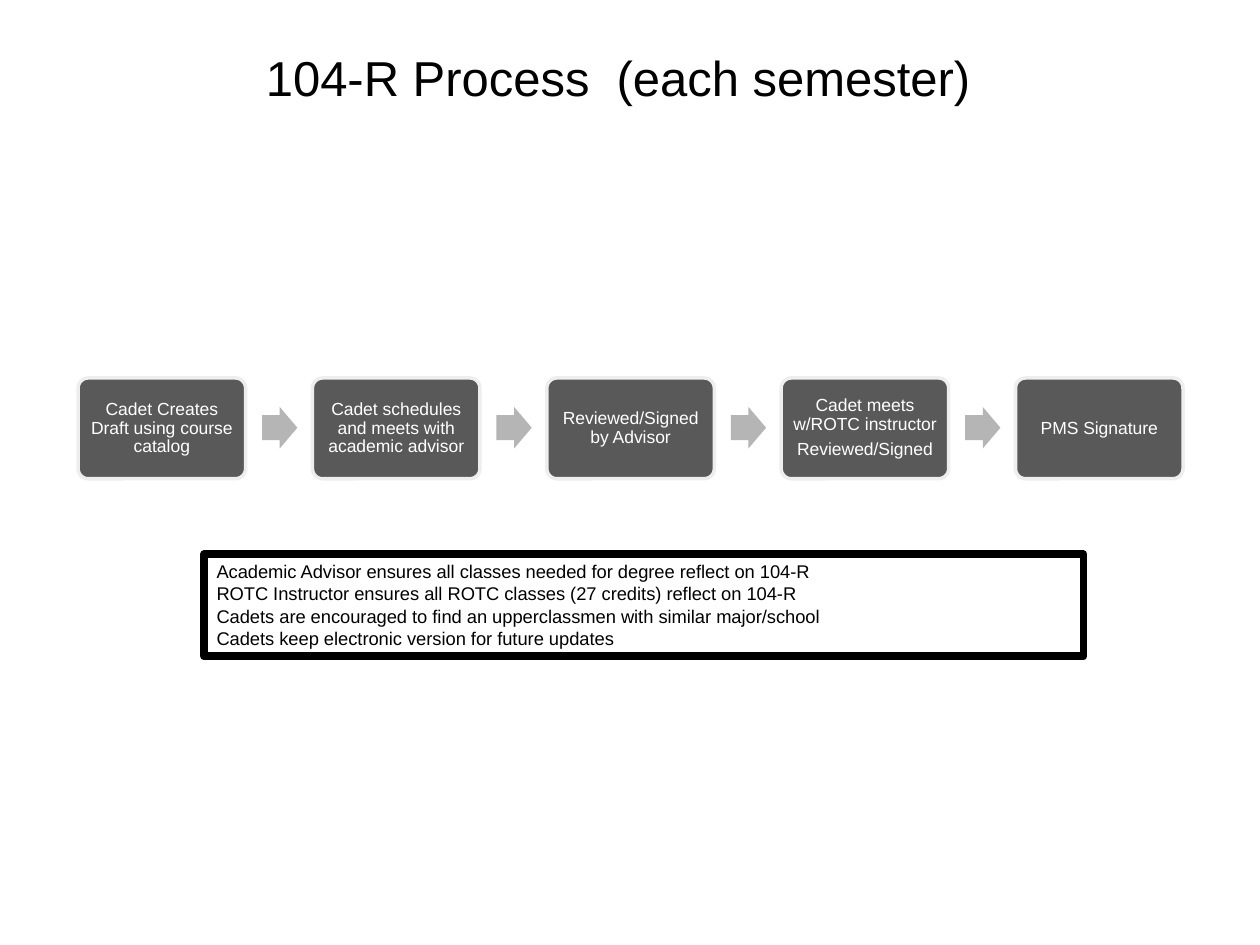
import pptx
import pptx.dml.color
import pptx.enum.shapes
import pptx.enum.text
import pptx.util

Inches = pptx.util.Inches
Pt = pptx.util.Pt
SHAPES = pptx.enum.shapes.MSO_SHAPE
ALIGN = pptx.enum.text.PP_ALIGN
ANCHOR = pptx.enum.text.MSO_ANCHOR

STEPS = [
    ["Cadet Creates Draft using course catalog"],
    ["Cadet schedules and meets with academic advisor"],
    ["Reviewed/Signed by Advisor"],
    ["Cadet meets w/ROTC instructor", "Reviewed/Signed"],
    ["PMS Signature"],
]
REMINDERS = [
    "Academic Advisor ensures all classes needed for degree reflect on 104-R",
    "ROTC Instructor ensures all ROTC classes (27 credits) reflect on 104-R",
    "Cadets are encouraged to find an upperclassmen with similar major/school",
    "Cadets keep electronic version for future updates",
]
STEP_LEFT, STEP_PITCH = 0.62, 1.86
ARROW_OFFSET = 1.46


def color(value):
    """Turn a hex string into a colour."""
    return pptx.dml.color.RGBColor.from_string(value)


def write(frame, lines, size, ink, align=ALIGN.LEFT, spacing=None, after=0):
    """Write each line as a paragraph with one formatted run."""
    frame.word_wrap = True
    for index, line in enumerate(lines):
        paragraph = frame.add_paragraph() if index else frame.paragraphs[0]
        paragraph.alignment = align
        paragraph.line_spacing = spacing
        paragraph.space_before = Pt(0)
        paragraph.space_after = Pt(after)
        run = paragraph.add_run()
        run.text = line
        run.font.name = "Arial"
        run.font.size = Pt(size)
        run.font.color.rgb = color(ink)


def set_margins(frame, margin):
    """Give a text frame the same margin on all sides."""
    frame.margin_left = frame.margin_right = Inches(margin)
    frame.margin_top = frame.margin_bottom = Inches(margin)


def add_box(slide, kind, bounds, fill=None, line=None, width=0):
    """Add a flat preset shape with an optional fill and outline."""
    box = slide.shapes.add_shape(kind, *map(Inches, bounds))
    box.shadow.inherit = False
    if fill:
        box.fill.solid()
        box.fill.fore_color.rgb = color(fill)
    else:
        box.fill.background()
    if line:
        box.line.color.rgb = color(line)
        box.line.width = Pt(width)
    else:
        box.line.fill.background()
    return box


def add_title(slide, heading):
    """Place and fill the title placeholder."""
    title = slide.shapes.title
    title.left, title.top = Inches(2.01), Inches(0.28)
    title.width, title.height = Inches(8.62), Inches(1.09)
    frame = title.text_frame
    frame.auto_size = pptx.enum.text.MSO_AUTO_SIZE.NONE
    frame.vertical_anchor = ANCHOR.TOP
    set_margins(frame, 0.1)
    write(frame, [heading], 28, "000000")


def add_step(slide, left, lines):
    """Add one rounded step of the process."""
    step = add_box(slide, SHAPES.ROUNDED_RECTANGLE, (left, 3, 1.33, 0.8),
                   "595959", "EEEEEE", 2)
    step.adjustments[0] = 0.1
    frame = step.text_frame
    frame.vertical_anchor = ANCHOR.MIDDLE
    set_margins(frame, 0.06)
    write(frame, lines, 10, "FFFFFF", ALIGN.CENTER, 0.9, 3.5)


def add_step_arrow(slide, left):
    """Add the block arrow that leads to the next step."""
    arrow = add_box(slide, SHAPES.RIGHT_ARROW, (left, 3.23, 0.28, 0.33), "B5B5B5")
    arrow.adjustments[0] = 0.6
    arrow.adjustments[1] = 0.5


def add_reminders(slide, lines):
    """Add the framed reminders below the process."""
    reminders = add_box(slide, SHAPES.RECTANGLE, (1.62, 4.4, 6.98, 0.81),
                        line="000000", width=4.5)
    frame = reminders.text_frame
    frame.vertical_anchor = ANCHOR.TOP
    frame.auto_size = pptx.enum.text.MSO_AUTO_SIZE.SHAPE_TO_FIT_TEXT
    write(frame, lines, 10.5, "000000")


def main():
    """Build and save the slide."""
    deck = pptx.Presentation()
    deck.slide_width, deck.slide_height = Inches(10), Inches(7.5)
    slide = deck.slides.add_slide(deck.slide_layouts[5])
    add_title(slide, "104-R Process  (each semester)")
    for index, lines in enumerate(STEPS):
        left = STEP_LEFT + index * STEP_PITCH
        add_step(slide, left, lines)
        if index < len(STEPS) - 1:
            add_step_arrow(slide, left + ARROW_OFFSET)
    add_reminders(slide, REMINDERS)
    deck.save("out.pptx")


if __name__ == "__main__":
    main()
